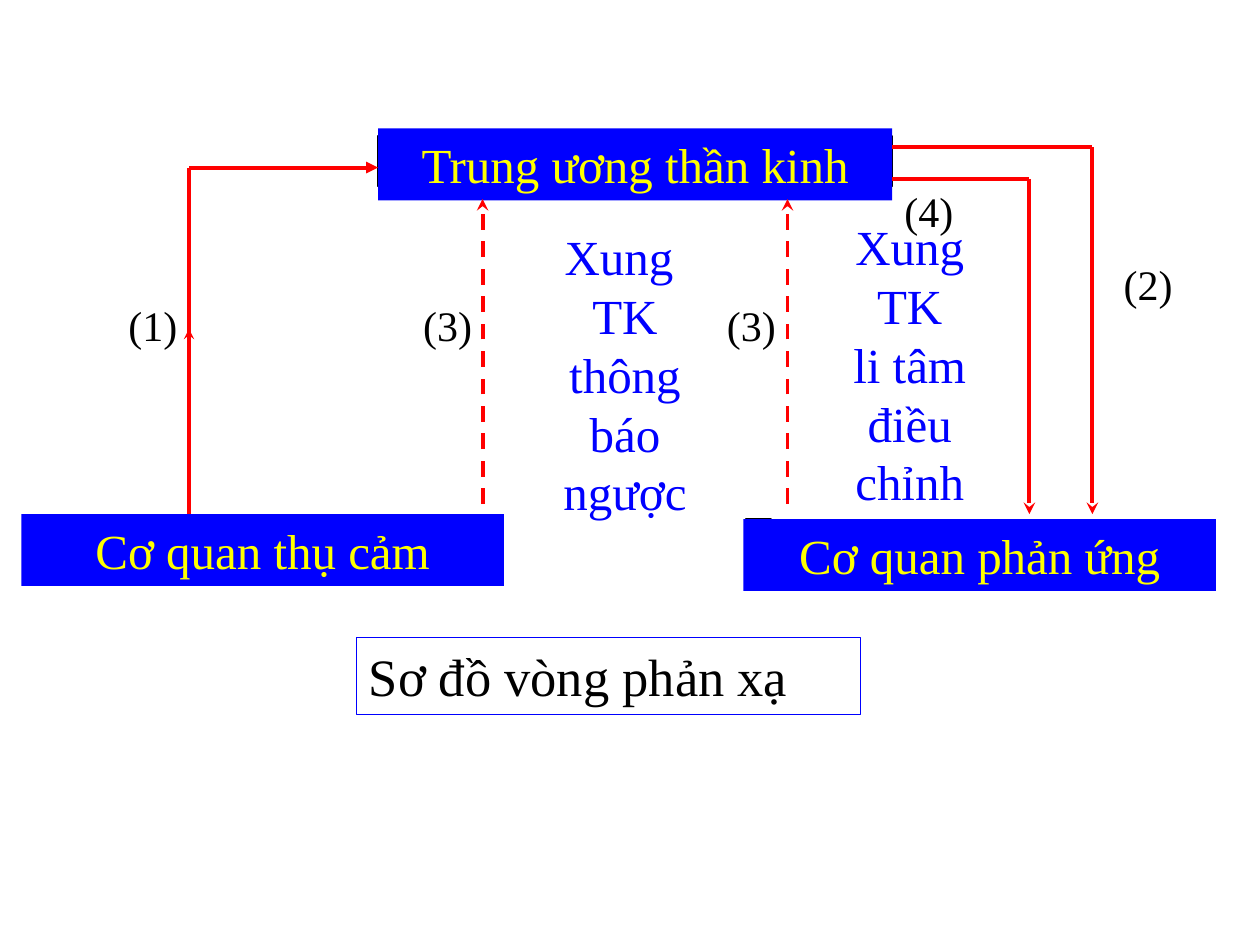
from pptx import Presentation
from pptx.dml.color import RGBColor
from pptx.enum.dml import MSO_LINE_DASH_STYLE as Dash
from pptx.enum.shapes import MSO_CONNECTOR as Connector, MSO_SHAPE as Shape
from pptx.enum.text import MSO_ANCHOR as Anchor, MSO_AUTO_SIZE as AutoSize, PP_ALIGN as Align
from pptx.oxml.ns import qn
from pptx.util import Inches, Pt
from lxml.etree import SubElement

COLOURS = {"blue": "0000FF", "navy": "333399", "yellow": "FFFF00", "red": "FF0000", "black": "000000"}
FRAME = {"word_wrap": True, "auto_size": AutoSize.SHAPE_TO_FIT_TEXT, "vertical_anchor": Anchor.TOP}


def colour(name):
    """Return the named colour."""
    return RGBColor.from_string(COLOURS[name])


def apply_format(target, values):
    """Set every attribute in values on the target."""
    for name, value in values.items():
        setattr(target, name, value)


def write_text(box, text, size, ink, align):
    """Write one paragraph with line breaks into a box."""
    apply_format(box.text_frame, FRAME)
    para = box.text_frame.paragraphs[0]
    para.alignment = align
    for index, line in enumerate(text.split("\n")):
        if index:
            para.add_line_break()
        span = para.add_run()
        span.text = line
        apply_format(span.font, {"name": "Times New Roman", "size": Pt(size)})
        span.font.color.rgb = colour(ink)


def add_box(page, place, fill=None, line=None):
    """Add a rectangle with an optional fill and outline."""
    box = page.shapes.add_shape(Shape.RECTANGLE, *map(Inches, place))
    box.shadow.inherit = False
    for part, name in ((box.fill, fill), (box.line.fill, line)):
        if name:
            part.solid()
            part.fore_color.rgb = colour(name)
        else:
            part.background()
    if line:
        box.line.width = Pt(0.75)
    return box


def add_label(page, place, text, size, ink, align=Align.LEFT):
    """Add a plain text box."""
    box = page.shapes.add_textbox(*map(Inches, place))
    write_text(box, text, size, ink, align)


def add_arrow(page, start, end, head=None, width=2.25, dash=None):
    """Add a red line with an optional arrowhead and dash."""
    arrow = page.shapes.add_connector(Connector.STRAIGHT, *map(Inches, start + end))
    apply_format(arrow.line, {"width": Pt(width), "dash_style": dash})
    arrow.line.color.rgb = colour("red")
    if head:
        SubElement(arrow.line._get_or_add_ln(), qn("a:tailEnd"), type=head)
    SubElement(arrow._element.spPr, qn("a:effectLst"))


def add_organs(page):
    """Add the three named parts of the reflex loop."""
    for place in ((3, 1.08, 4.08, 0.4), (5.92, 4.12, 0.2, 0.4)):
        add_box(page, place, "navy", "black")
    for left, top, width, text in (
        (3, 1.02, 4.08, "Trung ương thần kinh"),
        (0.17, 4.08, 3.83, "Cơ quan thụ cảm"),
        (5.9, 4.12, 3.75, "Cơ quan phản ứng"),
    ):
        box = add_box(page, (left, top, width, 0.57), "blue")
        write_text(box, text, 28, "yellow", Align.CENTER)


def add_pathways(page):
    """Add the nerve pathways between the parts."""
    add_arrow(page, (1.5, 1.33), (1.5, 4.08))
    add_arrow(page, (1.5, 3), (1.5, 2.61), "stealth", 2)
    add_arrow(page, (1.5, 1.33), (3, 1.33), "triangle")
    for x, y in ((8.67, 1.17), (8.17, 1.42)):
        add_arrow(page, (7.08, y), (x, y))
        add_arrow(page, (x, y), (x, 4.08), "stealth")
    for x in (3.83, 6.25):
        add_arrow(page, (x, 4), (x, 1.58), "stealth", dash=Dash.DASH)


def add_notes(page):
    """Add the step numbers, impulse names and caption."""
    for left, top, text in (
        (0.92, 2.33, "(1)"), (8.82, 2, "(2)"), (3.26, 2.33, "(3)"),
        (5.67, 2.33, "(3)"), (7.08, 1.42, "(4)"),
    ):
        add_label(page, (left, top, 0.68, 0.5), text, 24, "black")
    for left, top, text in (
        (4.25, 1.75, "Xung \nTK thông\nbáo\nngược"),
        (6.51, 1.67, "Xung\nTK\nli tâm điều chỉnh"),
    ):
        add_label(page, (left, top, 1.42, 2.44), text, 28, "blue", Align.CENTER)
    caption = add_box(page, (2.83, 5.06, 4, 0.61), line="blue")
    write_text(caption, "Sơ đồ vòng phản xạ", 30, "black", Align.LEFT)


def main():
    """Build and save the reflex loop diagram."""
    deck = Presentation()
    apply_format(deck, {"slide_width": Inches(10), "slide_height": Inches(7.5)})
    page = deck.slides.add_slide(deck.slide_layouts[6])
    add_organs(page)
    add_pathways(page)
    add_notes(page)
    deck.save("out.pptx")


if __name__ == "__main__":
    main()
